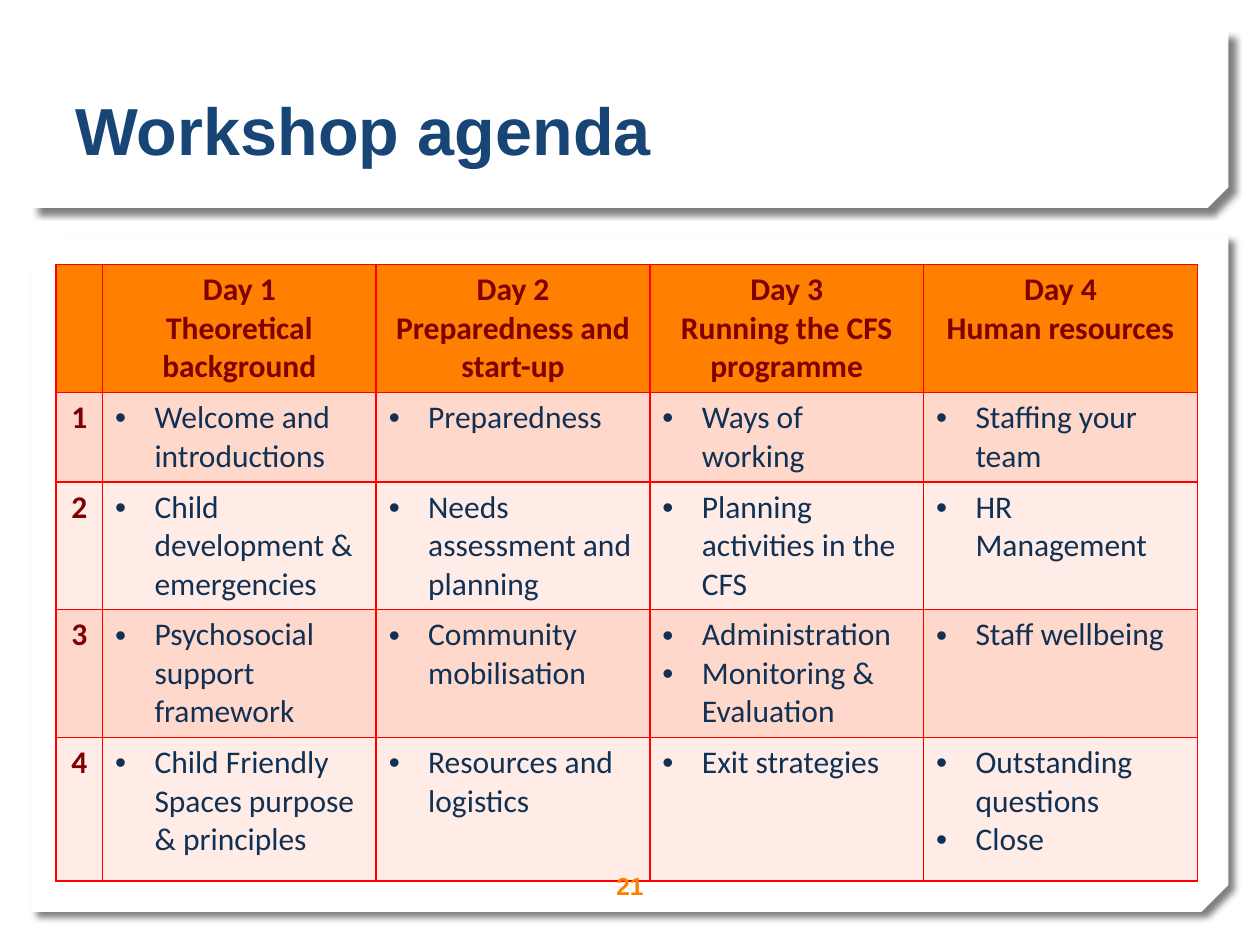
from lxml.etree import SubElement
from pptx import Presentation
from pptx.dml.color import RGBColor
from pptx.enum.shapes import MSO_SHAPE
from pptx.enum.text import MSO_ANCHOR, PP_ALIGN
from pptx.oxml import parse_xml
from pptx.oxml.ns import nsdecls, qn
from pptx.util import Pt

NAVY, MAROON, ORANGE, INK = "174576", "7E0000", "FF7F01", "103154"
BANDS = ["FFD8CC", "FFECE7"]
HEADS = [
    [],
    ["Day 1", "Theoretical background"],
    ["Day 2", "Preparedness and start-up"],
    ["Day 3", "Running the CFS programme"],
    ["Day 4", "Human resources"],
]
SESSIONS = [
    [["Welcome and introductions"], ["Preparedness"],
     ["Ways of working"], ["Staffing your team"]],
    [["Child development & emergencies"], ["Needs assessment and planning"],
     ["Planning activities in the CFS"], ["HR Management"]],
    [["Psychosocial support framework"], ["Community mobilisation"],
     ["Administration", "Monitoring & Evaluation"], ["Staff wellbeing"]],
    [["Child Friendly Spaces purpose & principles"], ["Resources and logistics"],
     ["Exit strategies"], ["Outstanding questions", "Close"]],
]
COL_WIDTHS = [26.6] + [156.4] * 4
ROW_HEIGHTS = [73, 51.2, 73, 73, 82]


def rgb(value):
    """Turn a hex string into a colour."""
    return RGBColor.from_string(value)


def add_bullet(p, indent=22.5):
    """Give a paragraph a hanging round bullet."""
    pPr = p._p.get_or_add_pPr()
    pPr.set("marL", str(Pt(indent)))
    pPr.set("indent", str(-Pt(indent)))
    SubElement(pPr, qn("a:buFont")).set("typeface", "Arial")
    SubElement(pPr, qn("a:buChar")).set("char", "•")


def write(tf, lines, size=18, font="Calibri", color=INK, bold=False,
          align=PP_ALIGN.LEFT, bullet=False):
    """Write one formatted paragraph per line."""
    for i, line in enumerate(lines):
        p = tf.add_paragraph() if i else tf.paragraphs[0]
        p.alignment = align
        if bullet:
            add_bullet(p)
        r = p.add_run()
        r.text = line
        r.font.size, r.font.name, r.font.bold = Pt(size), font, bold
        r.font.color.rgb = rgb(color)


def add_panel(s, left, top, width, height, snip):
    """Add a white panel with snipped corners and a soft shadow."""
    sp = s.shapes.add_shape(MSO_SHAPE.SNIP_2_DIAG_RECTANGLE,
                            Pt(left), Pt(top), Pt(width), Pt(height))
    sp.adjustments[0], sp.adjustments[1] = 0, snip
    sp.fill.solid()
    sp.fill.fore_color.rgb = rgb("FFFFFF")
    sp.line.fill.background()
    sp.shadow.inherit = False
    spPr = sp._element.spPr
    spPr.find(qn("a:xfrm")).set("flipV", "1")
    spPr.find(qn("a:effectLst")).append(parse_xml(
        f'<a:outerShdw {nsdecls("a")} blurRad="{Pt(4)}" dist="{Pt(5)}" '
        'dir="2700000" algn="tl" rotWithShape="0"><a:srgbClr val="000000">'
        '<a:alpha val="50000"/></a:srgbClr></a:outerShdw>'))


def add_label(s, left, top, width, height, text, anchor, margin=7.2, **fmt):
    """Add a wrapped text box."""
    tf = s.shapes.add_textbox(Pt(left), Pt(top), Pt(width), Pt(height)).text_frame
    tf.word_wrap = True
    tf.vertical_anchor = anchor
    tf.margin_left = tf.margin_right = Pt(margin)
    write(tf, [text], font="Arial", bold=True, **fmt)


def fill_cell(cell, lines, fill, **fmt):
    """Fill a cell, draw its borders and write its lines."""
    cell.fill.solid()
    cell.fill.fore_color.rgb = rgb(fill)
    for i, side in enumerate("LRTB"):
        cell._tc.get_or_add_tcPr().insert(i, parse_xml(
            f'<a:ln{side} {nsdecls("a")} w="{Pt(1)}"><a:solidFill>'
            f'<a:srgbClr val="FF0000"/></a:solidFill></a:ln{side}>'))
    write(cell.text_frame, lines, **fmt)


def add_agenda(s, left, top):
    """Add the agenda table with a day per column and a session per row."""
    table = s.shapes.add_table(
        len(ROW_HEIGHTS), len(COL_WIDTHS), Pt(left), Pt(top),
        Pt(sum(COL_WIDTHS)), Pt(sum(ROW_HEIGHTS))).table
    for col, width in zip(table.columns, COL_WIDTHS):
        col.width = Pt(width)
    for row, height in zip(table.rows, ROW_HEIGHTS):
        row.height = Pt(height)
    heading = dict(color=MAROON, bold=True, align=PP_ALIGN.CENTER)
    for c, lines in enumerate(HEADS):
        fill_cell(table.cell(0, c), lines, ORANGE, **heading)
    for r, session in enumerate(SESSIONS, 1):
        band = BANDS[(r - 1) % 2]
        fill_cell(table.cell(r, 0), [str(r)], band, **heading)
        for c, lines in enumerate(session, 1):
            fill_cell(table.cell(r, c), lines, band, bullet=True)


def main():
    """Build the slide and save it."""
    prs = Presentation()
    prs.slide_width, prs.slide_height = Pt(720), Pt(540)
    s = prs.slides.add_slide(prs.slide_layouts[6])
    add_panel(s, 18, 134.6, 684, 386.6, 0.04)
    add_panel(s, 18, 18, 684, 100.8, 0.117)
    add_label(s, 36, 10, 648, 90, "Workshop agenda", MSO_ANCHOR.BOTTOM,
              size=38, color=NAVY)
    add_agenda(s, 32, 151.2)
    add_label(s, 339, 492, 42, 28.8, "21", MSO_ANCHOR.MIDDLE, margin=0,
              size=14, color=ORANGE, align=PP_ALIGN.CENTER)
    prs.save("out.pptx")


if __name__ == "__main__":
    main()
